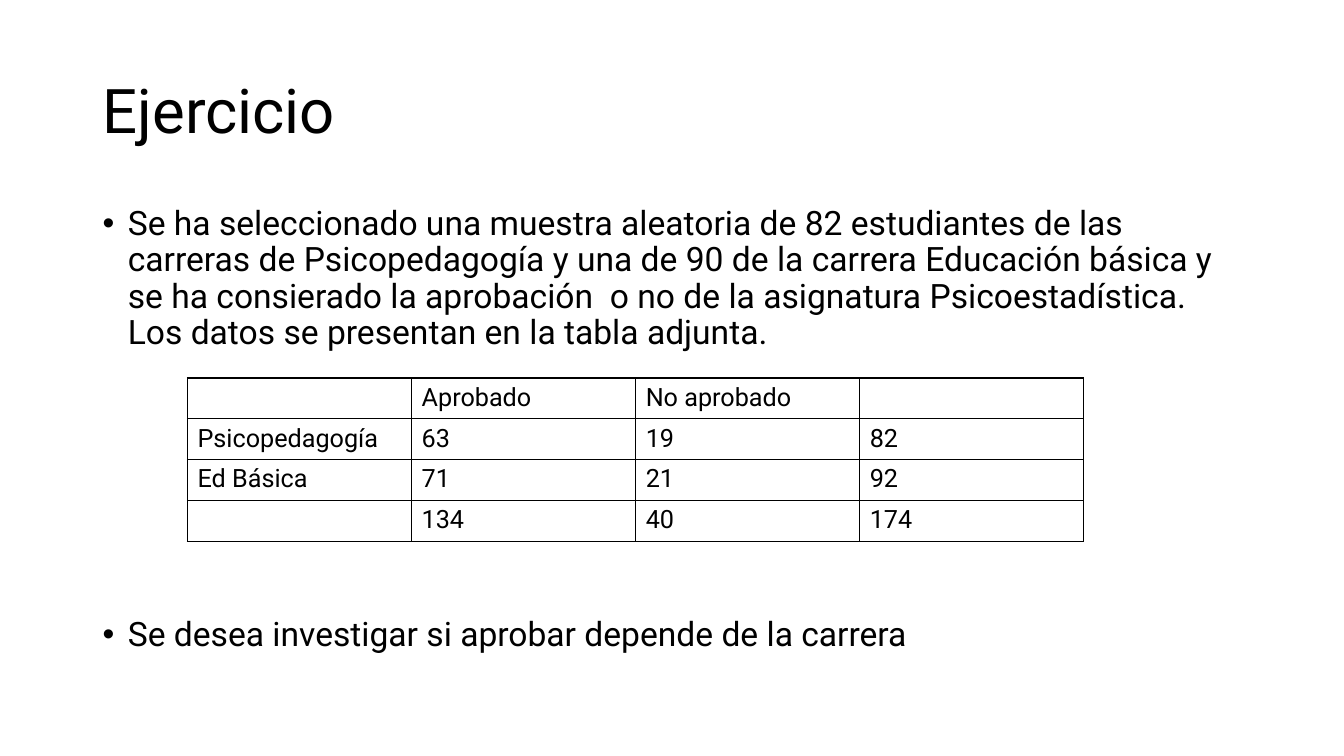
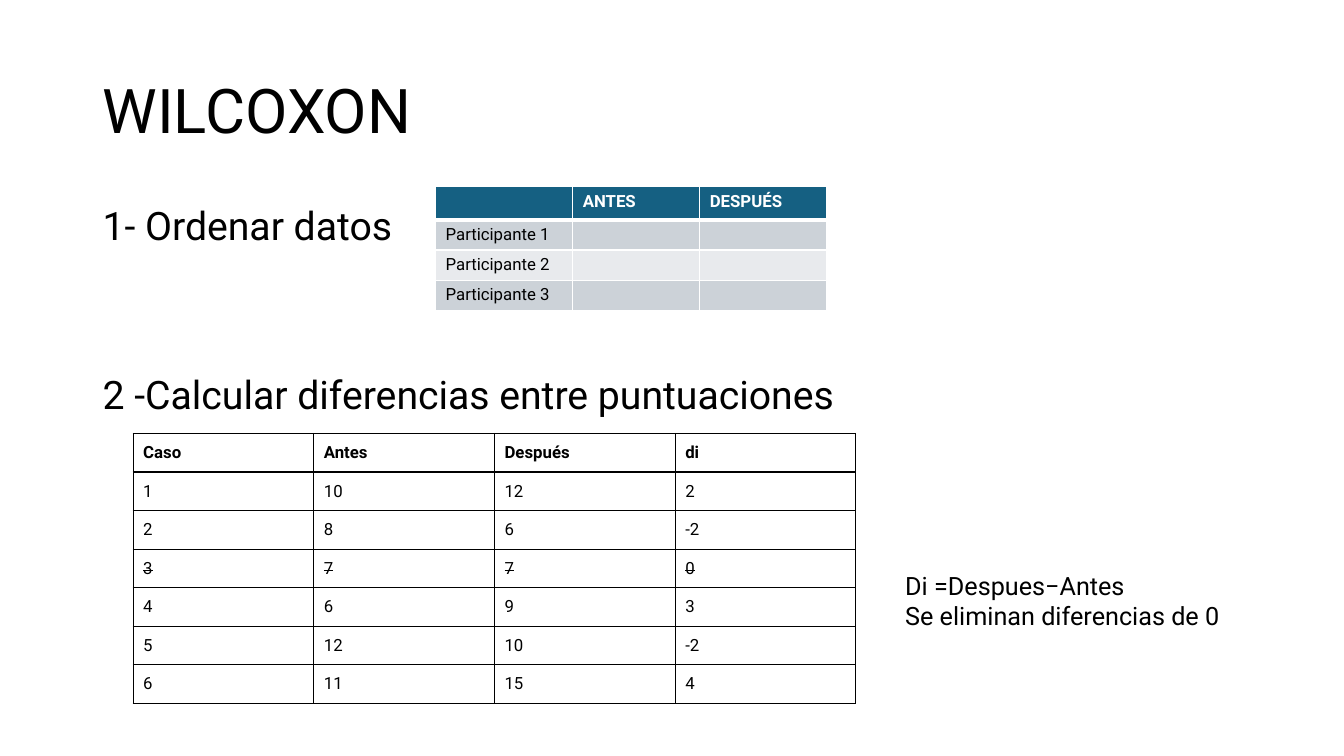
import pptx
import pptx.util
import pptx.dml.color
import pptx.enum.text
import pptx.oxml.ns
from lxml import etree

Inches = pptx.util.Inches
Pt = pptx.util.Pt
qn = pptx.oxml.ns.qn
MIDDLE = pptx.enum.text.MSO_ANCHOR.MIDDLE
TOP = pptx.enum.text.MSO_ANCHOR.TOP

BLACK = pptx.dml.color.RGBColor(0x00, 0x00, 0x00)
WHITE = pptx.dml.color.RGBColor(0xFF, 0xFF, 0xFF)
TEAL = pptx.dml.color.RGBColor(0x15, 0x60, 0x82)
BAND_DARK = pptx.dml.color.RGBColor(0xCC, 0xD2, 0xD8)
BAND_LIGHT = pptx.dml.color.RGBColor(0xE8, 0xEA, 0xED)
FONT = "Roboto"
TEXT_LEFT, TEXT_WIDTH = 0.92, 11.5


def add_text(slide, left, top, width, height, lines, size, anchor=TOP, spacing=0.9, bullet=False):
    shape = slide.shapes.add_textbox(Inches(left), Inches(top), Inches(width), Inches(height))
    frame = shape.text_frame
    frame.word_wrap = True
    frame.vertical_anchor = anchor
    for index, line in enumerate(lines):
        paragraph = frame.paragraphs[0] if index == 0 else frame.add_paragraph()
        paragraph.line_spacing = spacing
        if bullet:
            properties = paragraph._p.get_or_add_pPr()
            properties.set("marL", str(Inches(0.25)))
            properties.set("indent", str(-Inches(0.25)))
            etree.SubElement(properties, qn("a:buFont"), typeface="Arial")
            etree.SubElement(properties, qn("a:buChar"), char="•")
        run = paragraph.add_run()
        run.text = line
        for name, value in {"name": FONT, "size": Pt(size)}.items():
            setattr(run.font, name, value)
        run.font.color.rgb = BLACK


def add_table(slide, left, top, width, height, rows, size, border, anchor=TOP,
              bold_header=False, header_color=BLACK, fills=None, header_rule=1):
    shape = slide.shapes.add_table(len(rows), len(rows[0]), Inches(left), Inches(top),
                                   Inches(width), Inches(height))
    table = shape.table
    table.first_row = table.horz_banding = False
    for row_index, row in enumerate(rows):
        header = row_index == 0
        for column_index, text in enumerate(row):
            cell = table.cell(row_index, column_index)
            cell.vertical_anchor = anchor
            properties = cell._tc.get_or_add_tcPr()
            top_width = header_rule if row_index == 1 else 1
            bottom_width = header_rule if header else 1
            for side, points in {"L": 1, "R": 1, "T": top_width, "B": bottom_width}.items():
                line = etree.SubElement(properties, qn("a:ln" + side), w=str(Pt(points)))
                solid = etree.SubElement(line, qn("a:solidFill"))
                etree.SubElement(solid, qn("a:srgbClr"), val=str(border))
            if fills:
                cell.fill.solid()
                cell.fill.fore_color.rgb = fills[row_index]
            else:
                cell.fill.background()
            paragraph = cell.text_frame.paragraphs[0]
            if text:
                run = paragraph.add_run()
                run.text = text
                style = {"name": FONT, "size": Pt(size), "bold": bold_header and header}
                for name, value in style.items():
                    setattr(run.font, name, value)
                run.font.color.rgb = header_color if header else BLACK
            else:
                etree.SubElement(paragraph._p, qn("a:endParaRPr"), sz=str(size * 100))
    return table


presentation = pptx.Presentation()
presentation.slide_width = Inches(13.33)
presentation.slide_height = Inches(7.5)

slides = []
for title in ["Ejercicio", "WILCOXON"]:
    slide = presentation.slides.add_slide(presentation.slide_layouts[6])
    add_text(slide, TEXT_LEFT, 0.4, TEXT_WIDTH, 1.45, [title], 44, anchor=MIDDLE)
    slides.append(slide)
exercise, wilcoxon = slides

statement = (
    "Se ha seleccionado una muestra aleatoria de 82 estudiantes de las carreras de "
    "Psicopedagogía y una de 90 de la carrera Educación básica y se ha consierado la "
    "aprobación  o no de la asignatura Psicoestadística. Los datos se presentan en la "
    "tabla adjunta."
)
question = "Se desea investigar si aprobar depende de la carrera"
for top, height, text in [(2, 1.6, statement), (6.08, 0.5, question)]:
    add_text(exercise, TEXT_LEFT, top, TEXT_WIDTH, height, [text], 24, bullet=True)

approval_rows = [
    ["", "Aprobado", "No aprobado", ""],
    ["Psicopedagogía", "63", "19", "82"],
    ["Ed Básica", "71", "21", "92"],
    ["", "134", "40", "174"],
]
add_table(exercise, 1.86, 3.75, 8.89, 1.62, approval_rows, 18, BLACK)

steps = [(2, "1- Ordenar datos"), (3.68, "2 -Calcular diferencias entre puntuaciones")]
for top, step in steps:
    add_text(wilcoxon, TEXT_LEFT, top, TEXT_WIDTH, 0.55, [step], 28)

participant_rows = [["", "ANTES", "DESPUÉS"]]
participant_rows += [[f"Participante {number}", "", ""] for number in range(1, 4)]
participants = add_table(wilcoxon, 4.32, 1.85, 3.88, 1.24, participant_rows, 12, WHITE,
                         bold_header=True, header_color=WHITE,
                         fills=[TEAL, BAND_DARK, BAND_LIGHT, BAND_DARK], header_rule=3)
for column, width in zip(participants.columns, [1.36, 1.26, 1.26]):
    column.width = Inches(width)
for row, height in zip(participants.rows, [0.33, 0.3, 0.3, 0.3]):
    row.height = Inches(height)

add_text(wilcoxon, 8.88, 5.61, 3.54, 0.71,
         ["Di =Despues−Antes", "Se eliminan diferencias de 0"], 18, spacing=1.0)

scores = [(10, 12), (8, 6), (7, 7), (6, 9), (12, 10), (11, 15)]
difference_rows = [["Caso", "Antes", "Después", "di"]]
for case, (before, after) in enumerate(scores, start=1):
    # the sign follows Di = Despues − Antes
    difference_rows.append([str(case), str(before), str(after), str(after - before)])
differences = add_table(wilcoxon, 1.32, 4.3, 7.17, 2.68, difference_rows, 12, BLACK,
                        anchor=MIDDLE, bold_header=True)
for row_index, row in enumerate(difference_rows):
    if row[-1] == "0":
        for cell in differences.rows[row_index].cells:
            run = cell.text_frame.paragraphs[0].runs[0]
            run._r.get_or_add_rPr().set("strike", "sngStrike")

presentation.save("out.pptx")
